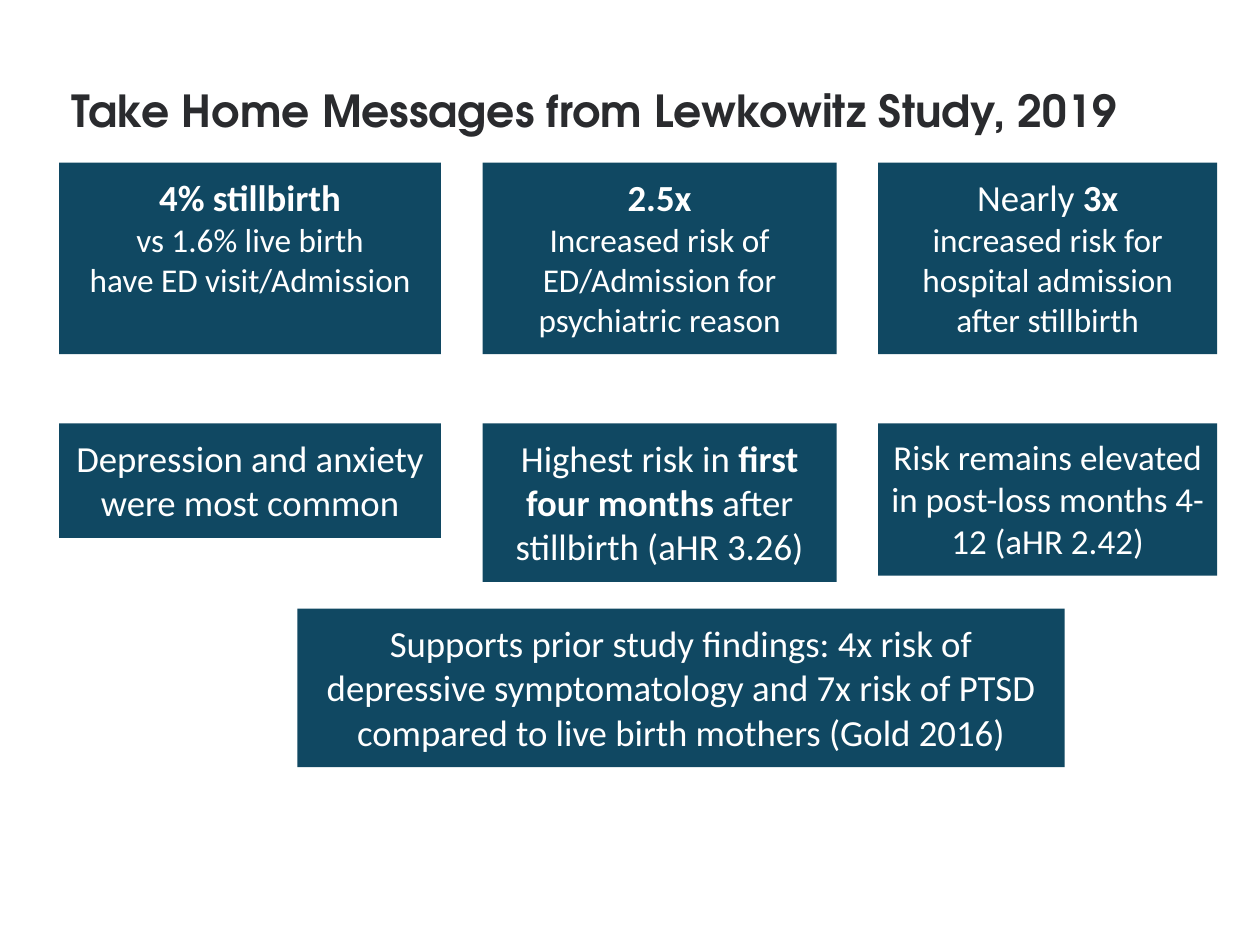
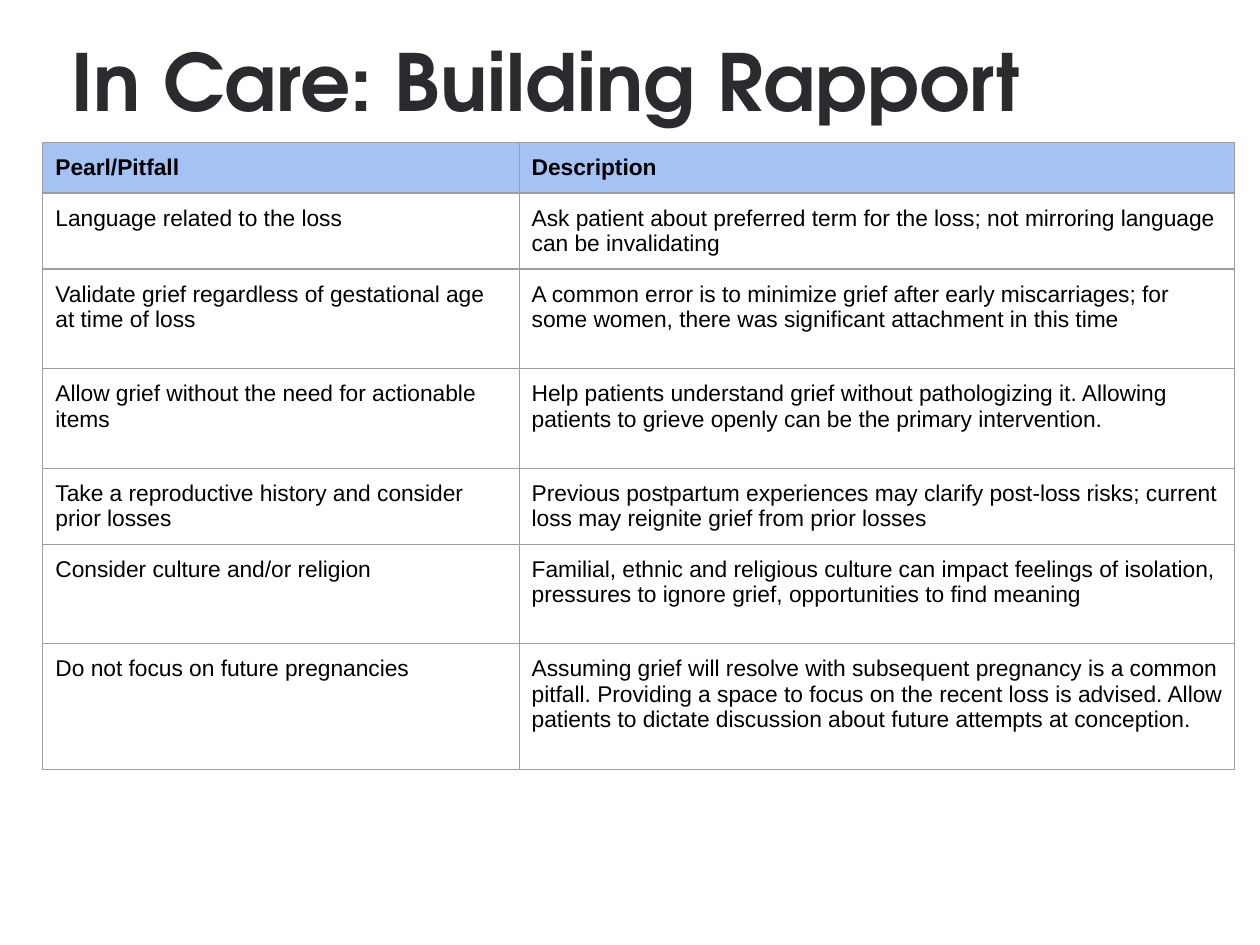
"""Two slides on psychiatric risk after stillbirth and on building rapport."""
from dataclasses import dataclass

from lxml.etree import SubElement
from pptx import Presentation
from pptx.dml.color import RGBColor as Color
from pptx.enum.shapes import MSO_SHAPE as Shape
from pptx.enum.text import MSO_ANCHOR as Anchor, MSO_AUTO_SIZE as AutoSize, PP_ALIGN as Align
from pptx.oxml.ns import qn
from pptx.util import Inches, Pt


@dataclass(frozen=True)
class Theme:
    """Colours, fonts and type sizes of the deck."""
    ink: str = "2A2B2E"
    card: str = "104862"
    card_text: str = "FFFFFF"
    header: str = "A4C2F4"
    border: str = "9E9E9E"
    table_text: str = "000000"
    title_font: str = "TeX Gyre Adventor"
    card_font: str = "Calibri"
    table_font: str = "Arial"
    lead: float = 21
    compact: float = 20
    detail: float = 19
    table_size: float = 13
    inset: float = 0.1


THEME = Theme()
LEFT = 0.47
COLUMNS = ((LEFT, 3.03), (3.83, 2.81), (6.97, 2.69))
ROWS = (1.29, 3.36)

CARDS = (
    (0, 0, 1.52, (
        (("4% stillbirth", THEME.lead, True),),
        (("vs 1.6% live birth", THEME.detail, False),),
        (("have ED visit/Admission", THEME.detail, False),))),
    (1, 0, 1.52, (
        (("2.5x", THEME.lead, True),),
        (("Increased risk of ED/Admission for psychiatric reason", THEME.detail, False),))),
    (2, 0, 1.52, (
        (("Nearly ", THEME.lead, False), ("3x", THEME.lead, True)),
        (("increased risk for hospital admission after stillbirth", THEME.detail, False),))),
    (0, 1, 0.91, (
        (("Depression and anxiety were most common", THEME.lead, False),),)),
    (1, 1, 1.26, (
        (("Highest risk in ", THEME.lead, False), ("first four months", THEME.lead, True),
         (" after stillbirth (aHR 3.26)", THEME.lead, False)),)),
    (2, 1, 1.21, (
        (("Risk remains elevated in post-loss months 4-12 (aHR 2.42)", THEME.compact, False),),)),
)
PRIOR_FINDINGS = (
    (("Supports prior study findings: 4x risk of depressive symptomatology and 7x risk of PTSD "
      "compared to live birth mothers (Gold 2016)", THEME.lead, False),),)

RAPPORT = (
    (0.4, "Pearl/Pitfall", "Description"),
    (0.6, "Language related to the loss",
     "Ask patient about preferred term for the loss; not mirroring language can be invalidating"),
    (0.79, "Validate grief regardless of gestational age at time of loss",
     "A common error is to minimize grief after early miscarriages; for some women, "
     "there was significant attachment in this time"),
    (0.79, "Allow grief without the need for actionable items",
     "Help patients understand grief without pathologizing it. Allowing patients to grieve "
     "openly can be the primary intervention."),
    (0.6, "Take a reproductive history and consider prior losses",
     "Previous postpartum experiences may clarify post-loss risks; current loss may reignite "
     "grief from prior losses"),
    (0.79, "Consider culture and/or religion",
     "Familial, ethnic and religious culture can impact feelings of isolation, pressures to "
     "ignore grief, opportunities to find meaning"),
    (1, "Do not focus on future pregnancies",
     "Assuming grief will resolve with subsequent pregnancy is a common pitfall. Providing a "
     "space to focus on the recent loss is advised. Allow patients to dictate discussion about "
     "future attempts at conception."),
)


def add_span(para, text, font, size, color, bold=False):
    """Append one formatted run to a paragraph."""
    span = para.add_run()
    span.text = text
    span.font.name = font
    span.font.size = Pt(size)
    span.font.bold = bold
    span.font.color.rgb = Color.from_string(color)


def set_insets(box, side, end):
    """Set the side and top/bottom margins of a text frame or cell."""
    box.margin_left = box.margin_right = Inches(side)
    box.margin_top = box.margin_bottom = Inches(end)


def add_titled_page(deck, text, size, top, width, height):
    """Add a title-only page and place its title."""
    page = deck.slides.add_slide(deck.slide_layouts[5])
    title = page.shapes.title
    title.left, title.top, title.width, title.height = map(Inches, (LEFT, top, width, height))
    frame = title.text_frame
    frame.word_wrap = True
    frame.auto_size = AutoSize.NONE
    frame.vertical_anchor = Anchor.MIDDLE
    set_insets(frame, THEME.inset, THEME.inset / 2)
    para = frame.paragraphs[0]
    para.alignment = Align.LEFT
    para.line_spacing = 0.9
    add_span(para, text, THEME.title_font, size, THEME.ink, True)
    return page


def add_card(page, left, top, width, height, paragraphs):
    """Add a filled card with centred text."""
    card = page.shapes.add_shape(Shape.RECTANGLE, *map(Inches, (left, top, width, height)))
    card.shadow.inherit = False
    card.fill.solid()
    card.fill.fore_color.rgb = Color.from_string(THEME.card)
    card.line.fill.background()
    frame = card.text_frame
    frame.word_wrap = True
    frame.auto_size = AutoSize.SHAPE_TO_FIT_TEXT
    frame.vertical_anchor = Anchor.TOP
    set_insets(frame, THEME.inset, THEME.inset)
    for index, spans in enumerate(paragraphs):
        para = frame.add_paragraph() if index else frame.paragraphs[0]
        para.alignment = Align.CENTER
        for text, size, bold in spans:
            add_span(para, text, THEME.card_font, size, THEME.card_text, bold)


def add_borders(cell):
    """Draw a thin line on the four sides of a cell."""
    properties = cell._tc.get_or_add_tcPr()
    for index, side in enumerate(("a:lnL", "a:lnR", "a:lnT", "a:lnB")):
        line = SubElement(properties, qn(side), w=str(Pt(0.75)))
        fill = SubElement(line, qn("a:solidFill"))
        SubElement(fill, qn("a:srgbClr"), val=THEME.border)
        properties.insert(index, line)


def fill_cell(cell, text, is_header):
    """Write and format one table cell."""
    set_insets(cell, THEME.inset, THEME.inset)
    cell.vertical_anchor = Anchor.TOP
    if is_header:
        cell.fill.solid()
        cell.fill.fore_color.rgb = Color.from_string(THEME.header)
    else:
        cell.fill.background()
    add_borders(cell)
    add_span(cell.text_frame.paragraphs[0], text, THEME.table_font, THEME.table_size,
             THEME.table_text, is_header)


def add_grid(page, left, top, widths, rows):
    """Add a table from rows of height and cell texts."""
    height = sum(row[0] for row in rows)
    frame = page.shapes.add_table(len(rows), len(widths),
                                  *map(Inches, (left, top, sum(widths), height)))
    table = frame.table
    table.horz_banding = False
    for column, width in zip(table.columns, widths):
        column.width = Inches(width)
    for index, (row_height, *texts) in enumerate(rows):
        table.rows[index].height = Inches(row_height)
        for cell, text in zip(table.rows[index].cells, texts):
            fill_cell(cell, text, index == 0)


def main():
    """Build and save the deck."""
    deck = Presentation()
    deck.slide_width, deck.slide_height = Inches(10), Inches(7.5)

    page = add_titled_page(deck, "Take Home Messages from Lewkowitz Study, 2019",
                           25.2, 0.53, 8.82, 0.73)
    for column, row, height, paragraphs in CARDS:
        left, width = COLUMNS[column]
        add_card(page, left, ROWS[row], width, height, paragraphs)
    add_card(page, 2.36, 4.83, 6.09, 1.26, PRIOR_FINDINGS)

    page = add_titled_page(deck, "In Care: Building Rapport", 45, 0.13, 8.62, 1.11)
    add_grid(page, 0.34, 1.13, (3.78, 5.68), RAPPORT)
    deck.save("out.pptx")


if __name__ == "__main__":
    main()
